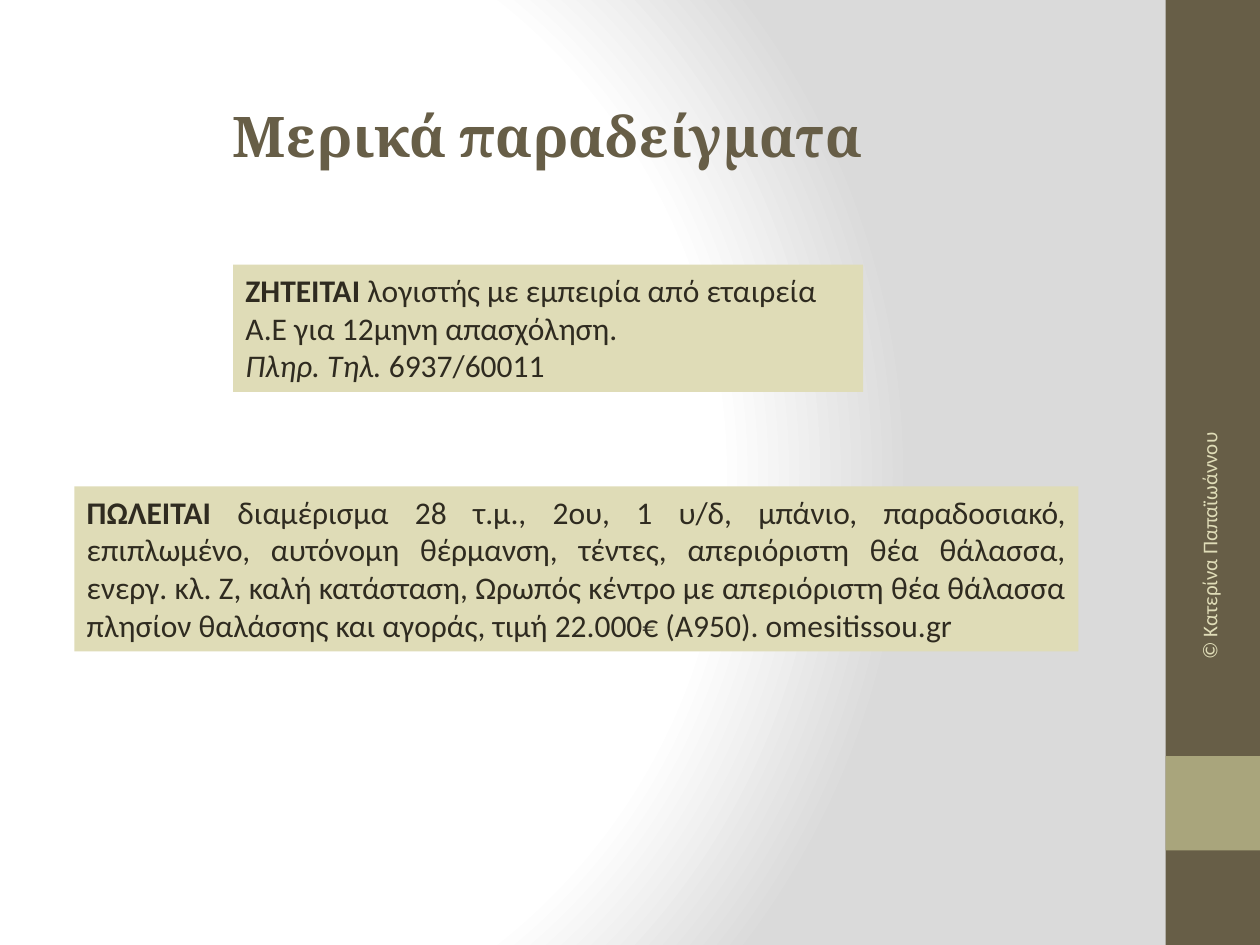
from dataclasses import dataclass

from pptx import Presentation
from pptx.dml.color import RGBColor
from pptx.enum.shapes import MSO_SHAPE as SHAPE
from pptx.enum.text import MSO_ANCHOR as ANCHOR, PP_ALIGN as ALIGN
from pptx.oxml import parse_xml
from pptx.oxml.ns import nsdecls
from pptx.util import Inches, Pt


@dataclass(frozen=True)
class Theme:
    olive: str = "675E47"
    sage: str = "A9A57C"
    sand: str = "DFDCB7"
    ink: str = "2F2B20"
    white: str = "FFFFFF"
    grey: str = "DADADA"
    heading: str = "Cambria"
    body: str = "Calibri"
    title_size: int = 32
    body_size: int = 18
    credit_size: int = 12


T = Theme()


def add_box(s, x, y, w, h, fill=None):
    at = [Inches(v) for v in (x, y, w, h)]
    if fill is None:
        return s.shapes.add_textbox(*at)
    sp = s.shapes.add_shape(SHAPE.RECTANGLE, *at)
    sp.shadow.inherit = False
    sp.fill.solid()
    sp.fill.fore_color.rgb = RGBColor.from_string(fill)
    sp.line.fill.background()
    return sp


def write(sp, lines, font=T.body, size=T.body_size, color=T.ink,
          align=ALIGN.LEFT, anchor=ANCHOR.TOP):
    """Write lines of (text, style) runs; style holds "b" and "i" flags."""
    tf = sp.text_frame
    tf.word_wrap = True
    tf.vertical_anchor = anchor
    p = tf.paragraphs[0]
    p.alignment = align
    for n, line in enumerate(lines):
        if n:
            p.add_line_break()
        for text, style in line:
            r = p.add_run()
            r.text = text
            r.font.name = font
            r.font.size = Pt(size)
            r.font.bold = "b" in style
            r.font.italic = "i" in style
            r.font.color.rgb = RGBColor.from_string(color)


prs = Presentation()
prs.slide_width, prs.slide_height = Inches(10), Inches(7.5)
s = prs.slides.add_slide(prs.slide_layouts[6])

# Radial background
stops = "".join(
    f'<a:gs pos="{pos * 1000}"><a:srgbClr val="{color}"/></a:gs>'
    for pos, color in ((0, T.white), (75, T.white), (100, T.grey)))
s._element.cSld.insert(0, parse_xml(
    f'<p:bg {nsdecls("p", "a")}><p:bgPr><a:gradFill rotWithShape="1">'
    f'<a:gsLst>{stops}</a:gsLst><a:path path="circle">'
    '<a:fillToRect l="20000" t="50000" r="100000" b="50000"/></a:path>'
    '</a:gradFill><a:effectLst/></p:bgPr></p:bg>'))

# Side band
add_box(s, 9.25, 0, 0.75, 7.5, T.olive)
add_box(s, 9.25, 6, 0.75, 0.75, T.sage)

# Job advertisement
write(add_box(s, 1.85, 2.1, 5, 1.01, T.sand), [
    [("ZHTEITAI ", "b"),
     ("λογιστής με εμπειρία από εταιρεία Α.Ε για 12μηνη απασχόληση.", "")],
    [("Πληρ. Τηλ. ", "i"), ("6937/60011", "")],
])

# Property advertisement
write(add_box(s, 0.59, 3.86, 7.97, 1.31, T.sand), [
    [("ΠΩΛΕΙΤΑΙ ", "b"),
     ("διαμέρισμα 28 τ.μ., 2ου, 1 υ/δ, μπάνιο, παραδοσιακό, επιπλωμένο, "
      "αυτόνομη θέρμανση, τέντες, απεριόριστη θέα θάλασσα, ενεργ. κλ. Ζ, "
      "καλή κατάσταση, Ωρωπός κέντρο με απεριόριστη θέα θάλασσα πλησίον "
      "θαλάσσης και αγοράς, τιμή 22.000€ (Α950). omesitissou.gr", "")],
], align=ALIGN.JUSTIFY)

# Title
write(add_box(s, 1.75, 0.76, 5.2, 0.64), [[("Μερικά παραδείγματα", "b")]],
      font=T.heading, size=T.title_size, color=T.olive)

# Credit on the side band
credit = add_box(s, 8.3, 4.43, 2.59, 0.4)
credit.rotation = 270
write(credit, [[("© Κατερίνα Παπαϊωάννου", "")]], size=T.credit_size,
      color=T.sand, align=ALIGN.RIGHT, anchor=ANCHOR.MIDDLE)

prs.save("out.pptx")
